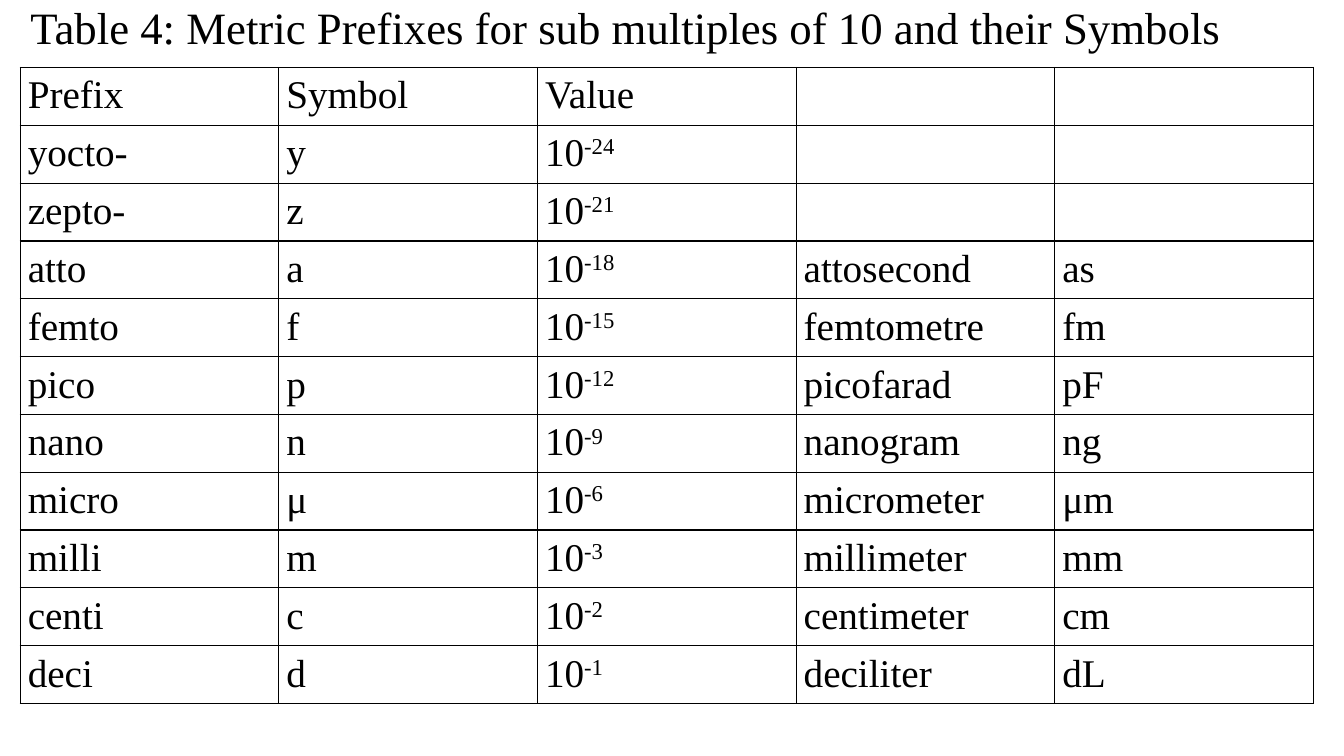
from lxml import etree
from pptx import Presentation
from pptx import util as u
from pptx.dml.color import RGBColor
from pptx.enum import text
from pptx.oxml.ns import qn

TITLE = "Table 4: Metric Prefixes for sub multiples of 10 and their Symbols"
HEADER = ("Prefix", "Symbol", "Value", "", "")
PREFIXES = [
    ("yocto-", "y", -24, "", ""),
    ("zepto-", "z", -21, "", ""),
    ("atto", "a", -18, "attosecond", "as"),
    ("femto", "f", -15, "femtometre", "fm"),
    ("pico", "p", -12, "picofarad", "pF"),
    ("nano", "n", -9, "nanogram", "ng"),
    ("micro", "μ", -6, "micrometer", "μm"),
    ("milli", "m", -3, "millimeter", "mm"),
    ("centi", "c", -2, "centimeter", "cm"),
    ("deci", "d", -1, "deciliter", "dL"),
]
COLORS = {"ink": "000000"}
FONT = "Times New Roman"
LEFT, WIDTH = u.Cm(0.51), u.Cm(32.59)
TABLE_TOP, TABLE_HEIGHT = u.Cm(1.7), u.Cm(16.03)
CELL_INSET = u.Cm(0.19)


def style(para, size):
    para.alignment = text.PP_ALIGN.JUSTIFY
    para.font.name = FONT
    para.font.size = u.Pt(size)
    para.font.color.rgb = RGBColor.from_string(COLORS["ink"])


def add_borders(cell):
    properties = cell._tc.get_or_add_tcPr()
    for index, side in enumerate(("lnL", "lnR", "lnT", "lnB")):
        line = etree.Element(qn(f"a:{side}"), w=str(u.Pt(1)))
        fill = etree.SubElement(line, qn("a:solidFill"))
        etree.SubElement(fill, qn("a:srgbClr"), val=COLORS["ink"])
        properties.insert(index, line)


def fill_cell(cell, value):
    cell.fill.background()
    cell.margin_left = cell.margin_right = CELL_INSET
    cell.margin_top = cell.margin_bottom = 0
    add_borders(cell)
    para = cell.text_frame.paragraphs[0]
    style(para, 28)
    para.line_spacing = 1.15
    if isinstance(value, int):
        para.add_run().text = "10"
        exponent = para.add_run()
        exponent.text = str(value)
        exponent.font._element.set("baseline", "30000")
    elif value:
        para.add_run().text = value


def main():
    deck = Presentation()
    deck.slide_width, deck.slide_height = u.Cm(33.87), u.Cm(19.05)
    page = deck.slides.add_slide(deck.slide_layouts[5])

    title = page.shapes.title
    title.left, title.top, title.width, title.height = LEFT, 0, WIDTH, u.Cm(1.35)
    frame = title.text_frame
    frame.text = TITLE
    frame.margin_top = frame.margin_bottom = 0
    frame.vertical_anchor = text.MSO_ANCHOR.MIDDLE
    style(frame.paragraphs[0], 32)

    rows = [HEADER, *PREFIXES]
    table = page.shapes.add_table(
        len(rows), len(HEADER), LEFT, TABLE_TOP, WIDTH, TABLE_HEIGHT
    ).table
    table.first_row = table.horz_banding = False
    for row, values in enumerate(rows):
        for column, value in enumerate(values):
            fill_cell(table.cell(row, column), value)

    deck.save("out.pptx")


if __name__ == "__main__":
    main()
